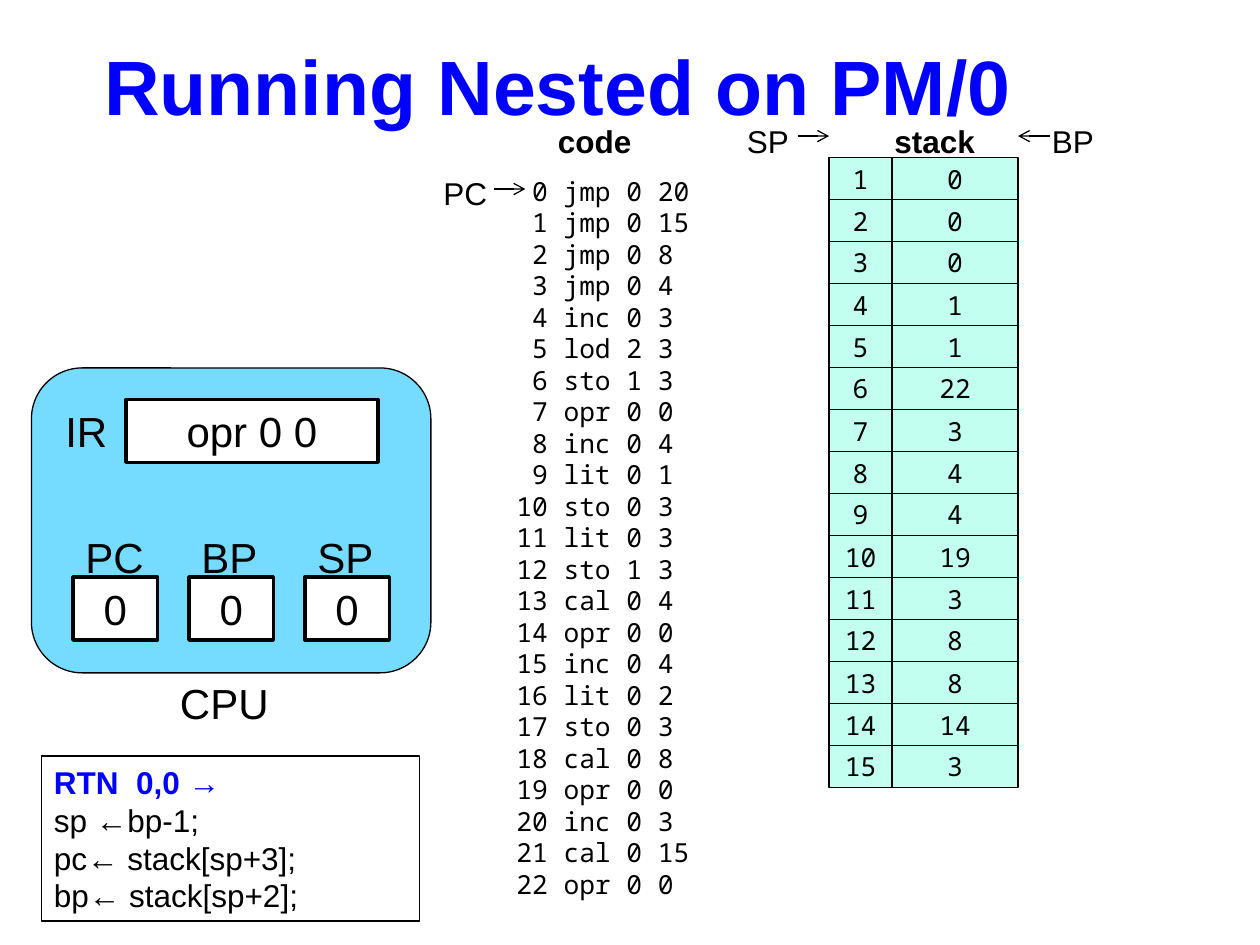
from dataclasses import dataclass

from lxml import etree
from pptx import Presentation
from pptx import util as u
from pptx.dml.color import RGBColor
from pptx.enum import shapes, text
from pptx.oxml.ns import qn

Inches, Pt = u.Inches, u.Pt


@dataclass(frozen=True)
class Theme:
    sans: str = "Arial"
    mono: str = "Noto Sans Mono"
    ink: str = "000000"
    accent: str = "0000FF"
    paper: str = "FFFFFF"
    cpu: str = "75DBFF"
    cell: str = "C2FFF0"
    title: float = 44
    register: float = 24
    label: float = 18
    code: float = 15
    thin: float = 0.75
    thick: float = 2


INSTRUCTIONS = [
    "jmp 0 20", "jmp 0 15", "jmp 0 8", "jmp 0 4", "inc 0 3", "lod 2 3",
    "sto 1 3", "opr 0 0", "inc 0 4", "lit 0 1", "sto 0 3", "lit 0 3",
    "sto 1 3", "cal 0 4", "opr 0 0", "inc 0 4", "lit 0 2", "sto 0 3",
    "cal 0 8", "opr 0 0", "inc 0 3", "cal 0 15", "opr 0 0",
]
STACK = [0, 0, 0, 1, 1, 22, 3, 4, 4, 19, 3, 8, 8, 14, 3]
REGISTERS = ["PC", "BP", "SP"]
RTN_STEPS = ["RTN  0,0 →", "sp ←bp-1;", "pc← stack[sp+3];", "bp← stack[sp+2];"]


class SlideBuilder:
    def __init__(self, slide, theme):
        self.slide = slide
        self.theme = theme

    def style(self, p, size, font=None, color=None, bold=False):
        for r in p.runs:
            r.font.size = Pt(size)
            r.font.name = font or self.theme.sans
            r.font.bold = bold
            r.font.color.rgb = RGBColor.from_string(color or self.theme.ink)

    def label(self, content, x, y, w, h, size, **font):
        tb = self.slide.shapes.add_textbox(Inches(x), Inches(y), Inches(w), Inches(h))
        tf = tb.text_frame
        tf.text = content
        tf.word_wrap = True
        for p in tf.paragraphs:
            self.style(p, size, **font)
        return tf

    def box(self, x, y, w, h, fill=None, line=None, content="", size=None,
            font=None, kind=shapes.MSO_SHAPE.RECTANGLE):
        sp = self.slide.shapes.add_shape(kind, Inches(x), Inches(y), Inches(w), Inches(h))
        sp.shadow.inherit = False
        if fill:
            sp.fill.solid()
            sp.fill.fore_color.rgb = RGBColor.from_string(fill)
        else:
            sp.fill.background()
        sp.line.color.rgb = RGBColor.from_string(self.theme.ink)
        sp.line.width = Pt(line or self.theme.thin)
        if content:
            tf = sp.text_frame
            tf.text = content
            tf.vertical_anchor = text.MSO_ANCHOR.MIDDLE
            for p in tf.paragraphs:
                p.alignment = text.PP_ALIGN.CENTER
                self.style(p, size, font)
        return sp

    def arrow(self, x1, x2, y):
        """Horizontal arrow pointing at x2."""
        c = self.slide.shapes.add_connector(
            shapes.MSO_CONNECTOR.STRAIGHT, Inches(x1), Inches(y), Inches(x2), Inches(y))
        c.line.color.rgb = RGBColor.from_string(self.theme.ink)
        c.line.width = Pt(self.theme.thin)
        etree.SubElement(c.line._get_or_add_ln(), qn("a:tailEnd"), type="arrow")
        etree.SubElement(c._element.spPr, qn("a:effectLst"))

    def register(self, x, y, w, content):
        t = self.theme
        return self.box(x, y, w, 0.5, t.paper, t.thick, content, t.register)


def draw_title(s):
    tf = s.label("Running Nested on PM/0", 0.16, 0.25, 8.31, 0.84, s.theme.title,
                 color=s.theme.accent, bold=True)
    tf.vertical_anchor = text.MSO_ANCHOR.BOTTOM
    tf.paragraphs[0]._p.get_or_add_pPr().set("marL", str(Inches(0.57)))


def draw_code(s):
    t = s.theme
    listing = "\n".join(f"{i:2} {op}" for i, op in enumerate(INSTRUCTIONS))
    tf = s.label(listing, 4, 1.34, 2.33, 6.16, t.code, font=t.mono)
    for p in tf.paragraphs:
        p.line_spacing = Pt(18)
    s.label("code", 4.33, 0.92, 0.9, 0.4, t.label, bold=True)
    s.arrow(3.92, 4.17, 1.5)
    s.label("PC", 3.42, 1.33, 0.67, 0.4, t.label)


def draw_cpu(s):
    t = s.theme
    s.box(0.25, 2.92, 3.17, 2.42, t.cpu, kind=shapes.MSO_SHAPE.ROUNDED_RECTANGLE)
    s.register(1, 3.17, 2, "opr 0 0")
    s.label("IR", 0.42, 3.17, 0.83, 0.5, t.register)
    for i, name in enumerate(REGISTERS):
        x = 0.58 + 0.92 * i
        s.register(x, 4.58, 0.67, "0")
        s.label(name, x, 4.17, 0.83, 0.5, t.register)
    s.label("CPU", 1.33, 5.33, 0.92, 0.5, t.register)


def draw_stack(s):
    t = s.theme
    row_h = 1 / 3
    s.label("stack", 7, 0.92, 0.9, 0.4, t.label, bold=True)
    for i, value in enumerate(STACK):
        y = 1.25 + row_h * i
        s.box(7.08, y, 1, row_h, t.cell, content=str(value), size=t.code, font=t.mono)
        s.box(6.58, y, 0.5, row_h, t.cell, content=str(i + 1), size=t.code, font=t.mono)
    for name, x, start, end in [("SP", 5.83, 6.33, 6.58), ("BP", 8.25, 8.33, 8.08)]:
        s.arrow(start, end, 1.08)
        s.label(name, x, 0.92, 0.67, 0.4, t.label)


def draw_rtn(s):
    t = s.theme
    sp = s.box(0.33, 6, 3, 1.31, content="\n".join(RTN_STEPS), size=t.label)
    heading, *_ = sp.text_frame.paragraphs
    s.style(heading, t.label, color=t.accent, bold=True)
    for p in sp.text_frame.paragraphs:
        p.alignment = text.PP_ALIGN.LEFT


def main():
    prs = Presentation()
    prs.slide_width, prs.slide_height = Inches(10), Inches(7.5)
    s = SlideBuilder(prs.slides.add_slide(prs.slide_layouts[6]), Theme())
    for draw in (draw_title, draw_code, draw_cpu, draw_stack, draw_rtn):
        draw(s)
    prs.save("out.pptx")


if __name__ == "__main__":
    main()
